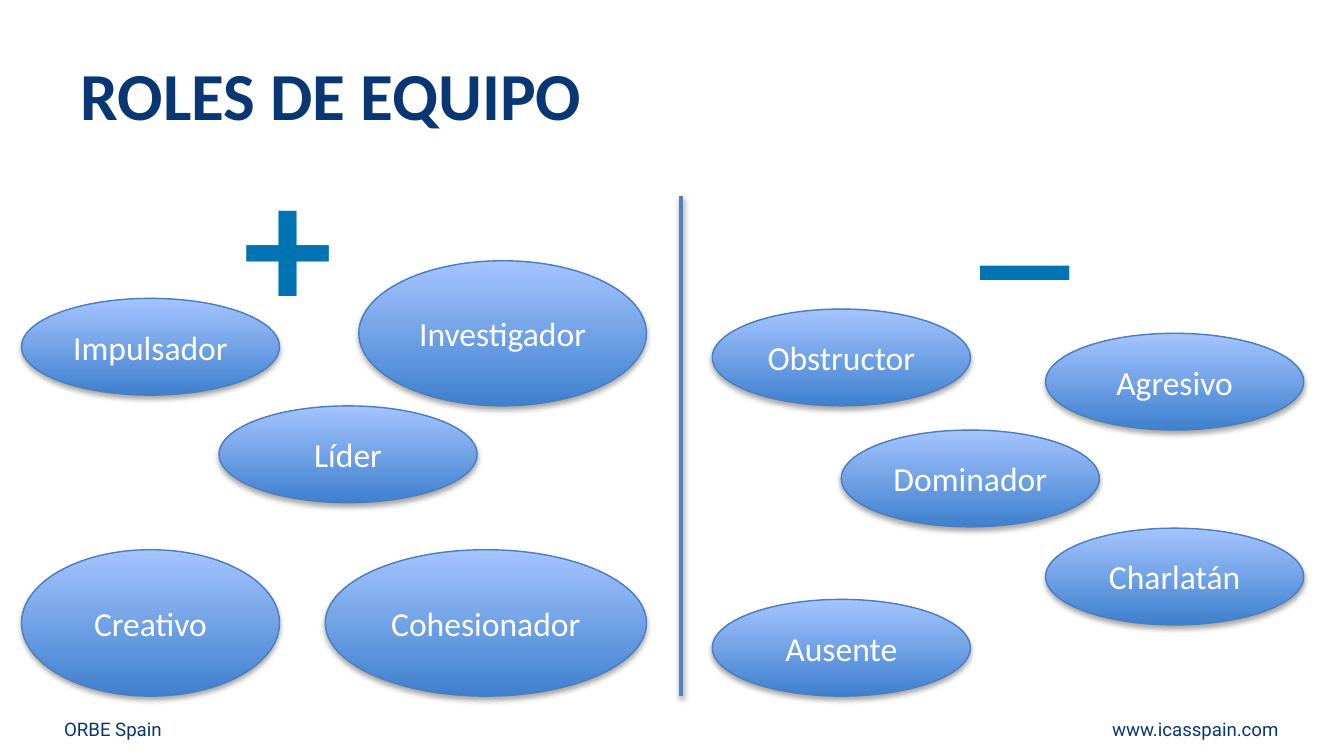
import pptx
import pptx.dml.color
import pptx.enum.shapes
import pptx.enum.text
import pptx.oxml
import pptx.oxml.ns
import pptx.util

Inches = pptx.util.Inches
Pt = pptx.util.Pt
Align = pptx.enum.text.PP_ALIGN
Anchor = pptx.enum.text.MSO_ANCHOR

COLORS = {
    "navy": "083773", "sign": "0074B3", "white": "FFFFFF",
    "low": "3F80CE", "high": "A4C4FF", "edge": "4B7EBC", "rule": "4F81BD",
}


def color(name):
    return pptx.dml.color.RGBColor.from_string(COLORS[name])


def write(frame, text, size=18, font="Calibri", ink="navy", bold=False,
          align=Align.LEFT, anchor=Anchor.TOP):
    frame.word_wrap = True
    frame.vertical_anchor = anchor
    par = frame.paragraphs[0]
    par.alignment = align
    run = par.add_run()
    run.text = text
    run.font.size = Pt(size)
    run.font.name = font
    run.font.bold = bold
    run.font.color.rgb = color(ink)


def shade(shape, dist, alpha):
    """Give the shape a soft black shadow straight below it."""
    shape._element.spPr.append(pptx.oxml.parse_xml(
        f'<a:effectLst {pptx.oxml.ns.nsdecls("a")}>'
        f'<a:outerShdw blurRad="{Pt(3.1)}" dist="{Pt(dist)}" dir="5400000" rotWithShape="0">'
        f'<a:srgbClr val="000000"><a:alpha val="{alpha * 1000}"/></a:srgbClr>'
        '</a:outerShdw></a:effectLst>'))


class Board:
    """Holds the slide and the look of its parts."""

    def __init__(self, slide):
        self.shapes = slide.shapes

    def label(self, text, left, top, width, height, **form):
        box = self.shapes.add_textbox(
            Inches(left), Inches(top), Inches(width), Inches(height))
        write(box.text_frame, text, **form)

    def role(self, text, left, top, width=1.92, height=0.72):
        oval = self.shapes.add_shape(
            pptx.enum.shapes.MSO_SHAPE.OVAL,
            Inches(left), Inches(top), Inches(width), Inches(height))
        oval.fill.gradient()
        oval.fill.gradient_angle = 90
        for stop, name in zip(oval.fill.gradient_stops, ("low", "high")):
            stop.color.rgb = color(name)
        oval.line.color.rgb = color("edge")
        oval.line.width = Pt(0.75)
        shade(oval, 1.8, 35)
        write(oval.text_frame, text, ink="white",
              align=Align.CENTER, anchor=Anchor.MIDDLE)

    def rule(self, x, top, bottom):
        line = self.shapes.add_connector(
            pptx.enum.shapes.MSO_CONNECTOR.STRAIGHT,
            Inches(x), Inches(top), Inches(x), Inches(bottom))
        line.line.color.rgb = color("rule")
        line.line.width = Pt(2)
        shade(line, 1.6, 38)


def main():
    deck = pptx.Presentation()
    deck.slide_width = Inches(10)
    deck.slide_height = deck.slide_width * 9 // 16
    board = Board(deck.slides.add_slide(deck.slide_layouts[6]))

    foot = {"size": 10, "font": "Roboto"}
    board.label("ORBE Spain", 0.38, 5.29, 3.87, 0.27, **foot)
    board.label("www.icasspain.com", 5.74, 5.29, 3.87, 0.27,
                align=Align.RIGHT, **foot)

    roles = [
        ("Impulsador", 0.16, 2.22),
        ("Investigador", 2.67, 1.94, 2.14, 1.08),
        ("Cohesionador", 2.42, 4.09, 2.39, 1.09),
        ("Creativo", 0.16, 4.09, 1.92, 1.09),
        ("Obstructor", 5.3, 2.3),
        ("Agresivo", 7.78, 2.48),
        ("Dominador", 6.26, 3.2),
        ("Ausente", 5.3, 4.46),
        ("Charlatán", 7.78, 3.93),
        ("Líder", 1.63, 3.02),
    ]
    for role in roles:
        board.role(*role)

    board.label("ROLES DE EQUIPO", 0.5, 0.23, 9.12, 0.94,
                size=36, bold=True, anchor=Anchor.MIDDLE)
    board.rule(5.07, 1.46, 5.18)
    mark = {"size": 96, "ink": "sign", "bold": True}
    board.label("+", 1.71, 0.93, 1.92, 1.72, **mark)
    board.label("_", 7.2, 0.52, 1.96, 1.72, **mark)

    deck.save("out.pptx")


if __name__ == "__main__":
    main()
